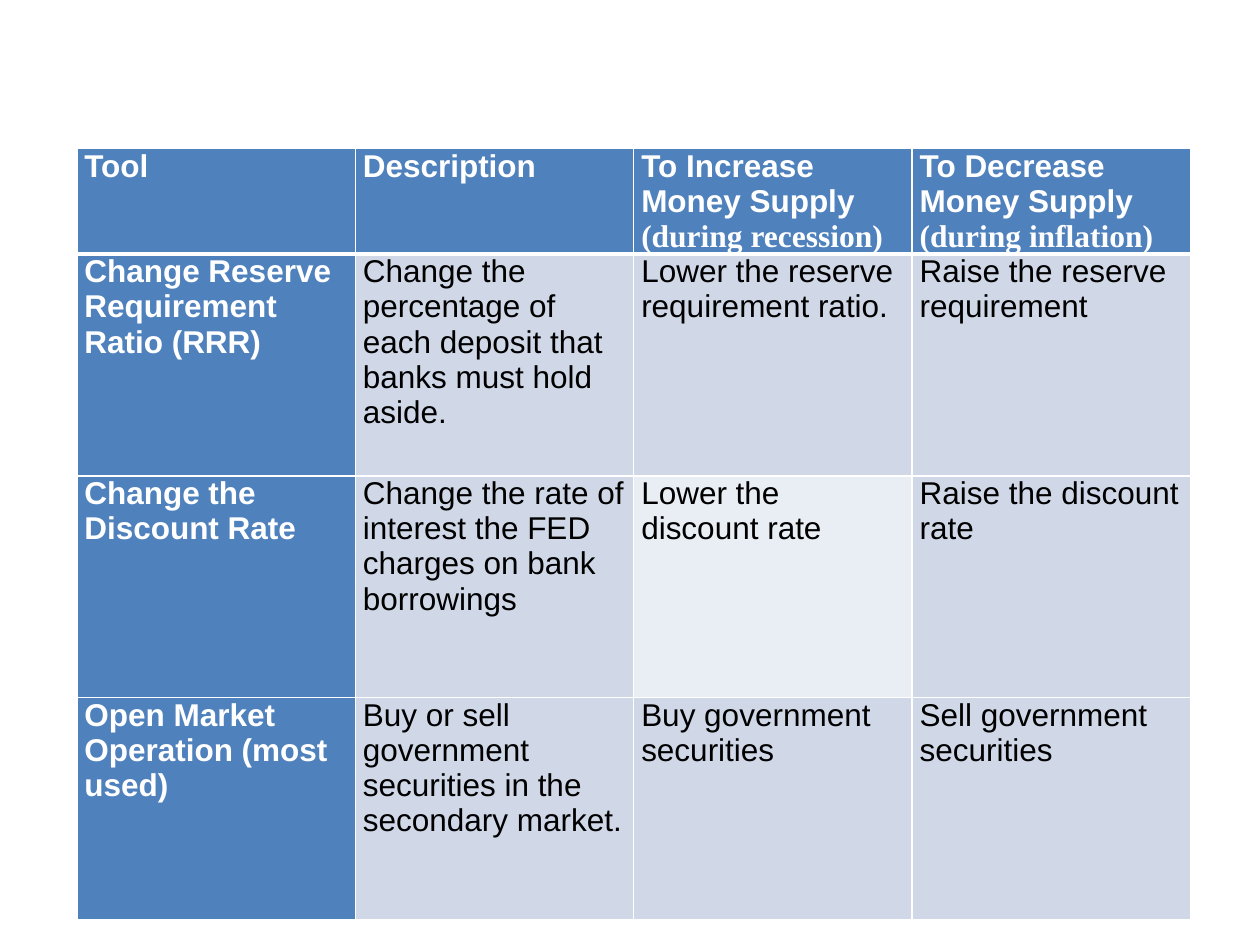
"""Build a slide with a table of the three monetary policy tools."""
from dataclasses import dataclass

from lxml import etree
from pptx import Presentation
from pptx import util as u
from pptx.dml.color import RGBColor
from pptx.oxml import ns


@dataclass(frozen=True)
class Theme:
    accent: str = "4F81BD"
    band: str = "D0D8E8"
    pale: str = "E9EDF4"
    white: str = "FFFFFF"
    black: str = "000000"
    body_font: str = "Arial"
    note_font: str = "Times New Roman"
    size: int = 18


def px(n):
    return u.Emu(n * 9144)


def add_border(cell, side, width):
    tcPr = cell._tc.get_or_add_tcPr()
    ln = etree.SubElement(tcPr, ns.qn(f"a:ln{side}"), w=str(u.Pt(width)))
    fill = etree.SubElement(ln, ns.qn("a:solidFill"))
    etree.SubElement(fill, ns.qn("a:srgbClr"), val=theme.white)


theme = Theme()
ROWS = [
    [["Tool"], ["Description"],
     ["To Increase Money Supply", "(during recession)"],
     ["To Decrease Money Supply", "(during inflation)"]],
    [["Change Reserve Requirement Ratio (RRR)"],
     ["Change the percentage of each deposit that banks must hold aside."],
     ["Lower the reserve requirement ratio."],
     ["Raise the reserve requirement"]],
    [["Change the Discount Rate"],
     ["Change the rate of interest the FED charges on bank borrowings"],
     ["Lower the discount rate"],
     ["Raise the discount rate"]],
    [["Open Market Operation (most used)"],
     ["Buy or sell government securities in the secondary market."],
     ["Buy government securities"],
     ["Sell government securities"]],
]
COL_W = 221
ROW_H = [83, 176, 176, 176]
PALE_CELL = (2, 2)

prs = Presentation()
prs.slide_width, prs.slide_height = px(1000), px(750)
s = prs.slides.add_slide(prs.slide_layouts[6])

frame = s.shapes.add_table(len(ROWS), len(ROWS[0]), px(61), px(118),
                           px(COL_W * len(ROWS[0])), px(sum(ROW_H)))
tbl = frame.table
for col in tbl.columns:
    col.width = px(COL_W)

for i, row in enumerate(ROWS):
    tbl.rows[i].height = px(ROW_H[i])
    for j, lines in enumerate(row):
        cell = tbl.cell(i, j)
        heading = i == 0 or j == 0
        cell.margin_left = cell.margin_right = px(6)
        cell.margin_top = cell.margin_bottom = 0
        for side in "LRTB":
            under_header = (i, side) in ((0, "B"), (1, "T"))
            add_border(cell, side, 3 if under_header else 1)
        colour = theme.accent if heading else theme.band
        if (i, j) == PALE_CELL:
            colour = theme.pale
        cell.fill.solid()
        cell.fill.fore_color.rgb = RGBColor.from_string(colour)

        tf = cell.text_frame
        for k, line in enumerate(lines):
            p = tf.add_paragraph() if k else tf.paragraphs[0]
            r = p.add_run()
            r.text = line
            r.font.name = theme.note_font if k else theme.body_font
            r.font.size = u.Pt(theme.size)
            r.font.bold = heading
            r.font.color.rgb = RGBColor.from_string(
                theme.white if heading else theme.black)

prs.save("out.pptx")
